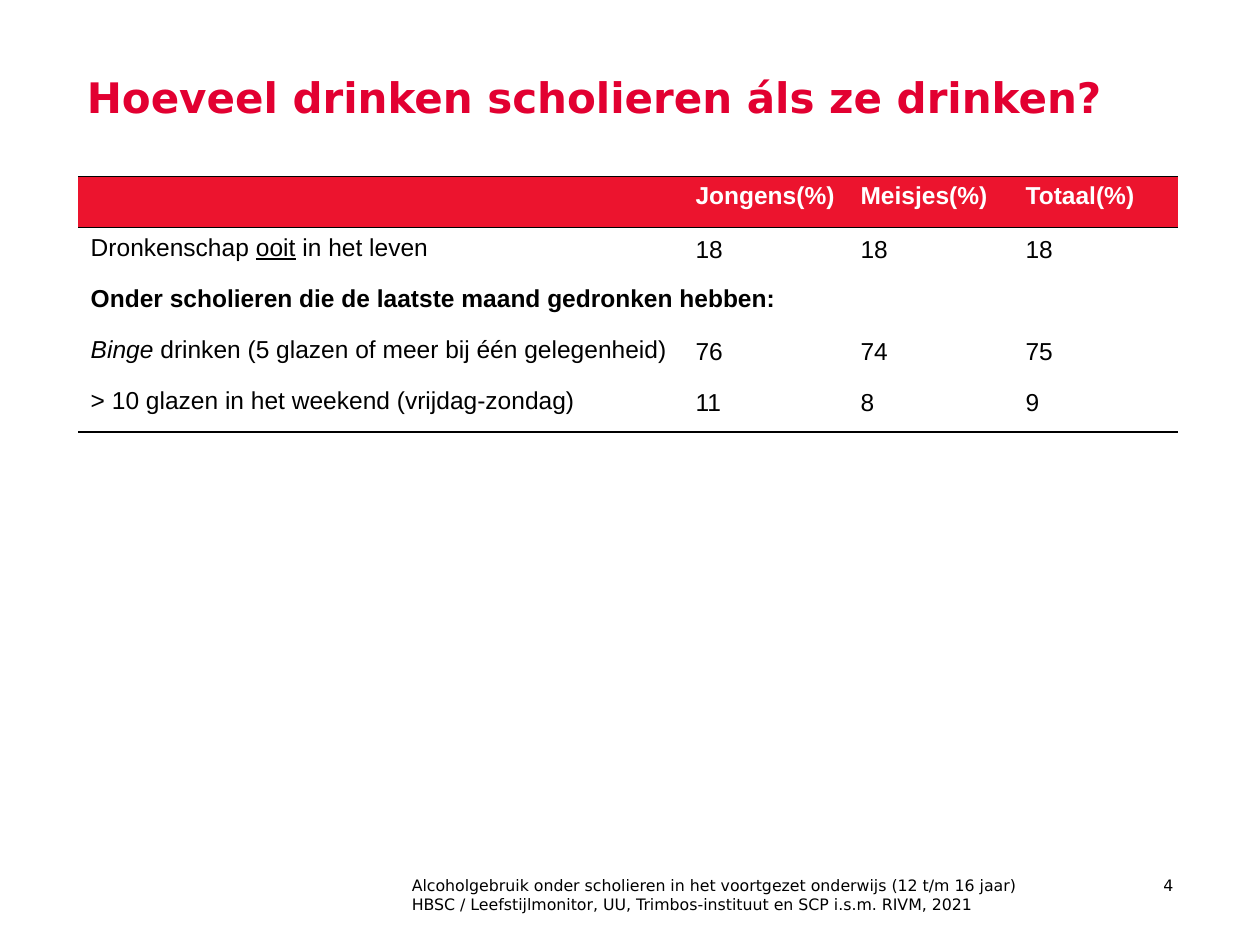
"""Build a slide with a table on how much pupils drink."""
import pptx
import pptx.dml.color
import pptx.enum.text
import pptx.oxml
import pptx.oxml.ns
import pptx.util

Inches, Pt = pptx.util.Inches, pptx.util.Pt
RGBColor = pptx.dml.color.RGBColor
BLACK = RGBColor(0, 0, 0)
WHITE = RGBColor(0xFF, 0xFF, 0xFF)
TITLE_RED = RGBColor(0xE2, 0x00, 0x31)
HEADER_RED = RGBColor(0xEC, 0x14, 0x2E)

SMALL = {"name": "DejaVu Sans", "size": Pt(9)}
LARGE = {"name": "DejaVu Sans", "size": Pt(24), "bold": True}
BODY = {"name": "Arial", "size": Pt(14)}
BOLD = {"bold": True}
LEFT, RIGHT = pptx.enum.text.PP_ALIGN.LEFT, pptx.enum.text.PP_ALIGN.RIGHT

BOXES = [
    ((3.17, 6.9, 5.77, 0.4),
     ["Alcoholgebruik onder scholieren in het voortgezet onderwijs (12 t/m 16 jaar)",
      "HBSC / Leefstijlmonitor, UU, Trimbos-instituut en SCP i.s.m. RIVM, 2021"],
     SMALL, BLACK, LEFT),
    ((8.62, 6.9, 0.79, 0.4), ["4"], SMALL, BLACK, RIGHT),
    ((0.59, 0.52, 8.82, 1.26), ["Hoeveel drinken scholieren áls ze drinken?"],
     LARGE, TITLE_RED, LEFT),
]

TABLE_AT = (0.62, 1.4, 8.73, 2.03)
COL_WIDTHS = [4.8, 1.31, 1.31, 1.31]
HEADER = ["Jongens(%)", "Meisjes(%)", "Totaal(%)"]
ROWS = [
    ([("Dronkenschap ", {}), ("ooit", {"underline": True}), (" in het leven", {})],
     ["18", "18", "18"]),
    ([("Onder scholieren die de laatste maand gedronken hebben:", BOLD)], []),
    ([("Binge ", {"italic": True}),
      ("drinken (5 glazen of meer bij één gelegenheid)", {})],
     ["76", "74", "75"]),
    ([("> 10 glazen in het weekend (vrijdag-zondag)", {})], ["11", "8", "9"]),
]


def add_run(p, text, fmt, color):
    r = p.add_run()
    r.text = text
    for key, value in fmt.items():
        setattr(r.font, key, value)
    r.font.color.rgb = color


def add_text(s, at, lines, fmt, color, align):
    tf = s.shapes.add_textbox(*map(Inches, at)).text_frame
    tf.word_wrap = True
    for i, line in enumerate(lines):
        p = tf.add_paragraph() if i else tf.paragraphs[0]
        p.alignment = align
        add_run(p, line, fmt, color)


def set_borders(cell, ruled):
    tc_pr = cell._tc.get_or_add_tcPr()
    for side in "LRTB":
        fill = (f'<a:solidFill><a:srgbClr val="{BLACK}"/></a:solidFill>'
                if side in ruled else "<a:noFill/>")
        tc_pr.append(pptx.oxml.parse_xml(
            f'<a:ln{side} {pptx.oxml.ns.nsdecls("a")} w="{Pt(1)}">{fill}</a:ln{side}>'))


def add_results(s):
    grid = [([], HEADER)] + ROWS
    table = s.shapes.add_table(len(grid), len(COL_WIDTHS), *map(Inches, TABLE_AT)).table
    table.first_row = table.horz_banding = False
    for column, width in zip(table.columns, COL_WIDTHS):
        column.width = Inches(width)
    rules = {0: "TB", 1: "T", len(grid) - 1: "B"}
    for i, (label, values) in enumerate(grid):
        fmt, color = (BOLD, WHITE) if i == 0 else ({}, BLACK)
        contents = [label] + [[(value, fmt)] for value in values]
        for j, cell in enumerate(table.rows[i].cells):
            set_borders(cell, rules.get(i, ""))
            if i == 0:
                cell.fill.solid()
                cell.fill.fore_color.rgb = HEADER_RED
            else:
                cell.fill.background()
            p = cell.text_frame.paragraphs[0]
            if i and j and values:
                p.line_spacing = 1.07
            for text, extra in contents[j] if j < len(contents) else []:
                add_run(p, text, {**BODY, **extra}, color)
        if not values:
            table.cell(i, 0).merge(table.cell(i, len(COL_WIDTHS) - 1))


def main():
    prs = pptx.Presentation()
    prs.slide_width, prs.slide_height = Inches(10), Inches(7.5)
    s = prs.slides.add_slide(prs.slide_layouts[6])
    for box in BOXES:
        add_text(s, *box)
    add_results(s)
    prs.save("out.pptx")


if __name__ == "__main__":
    main()
